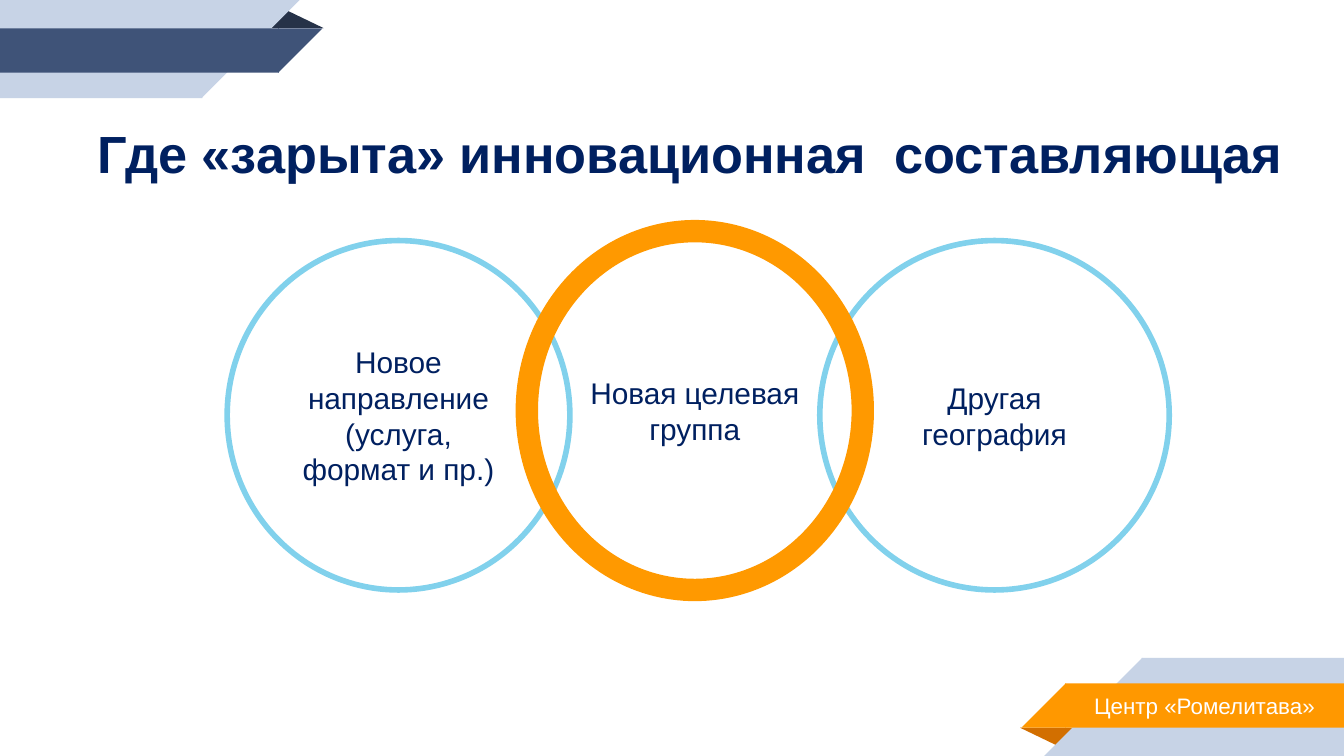
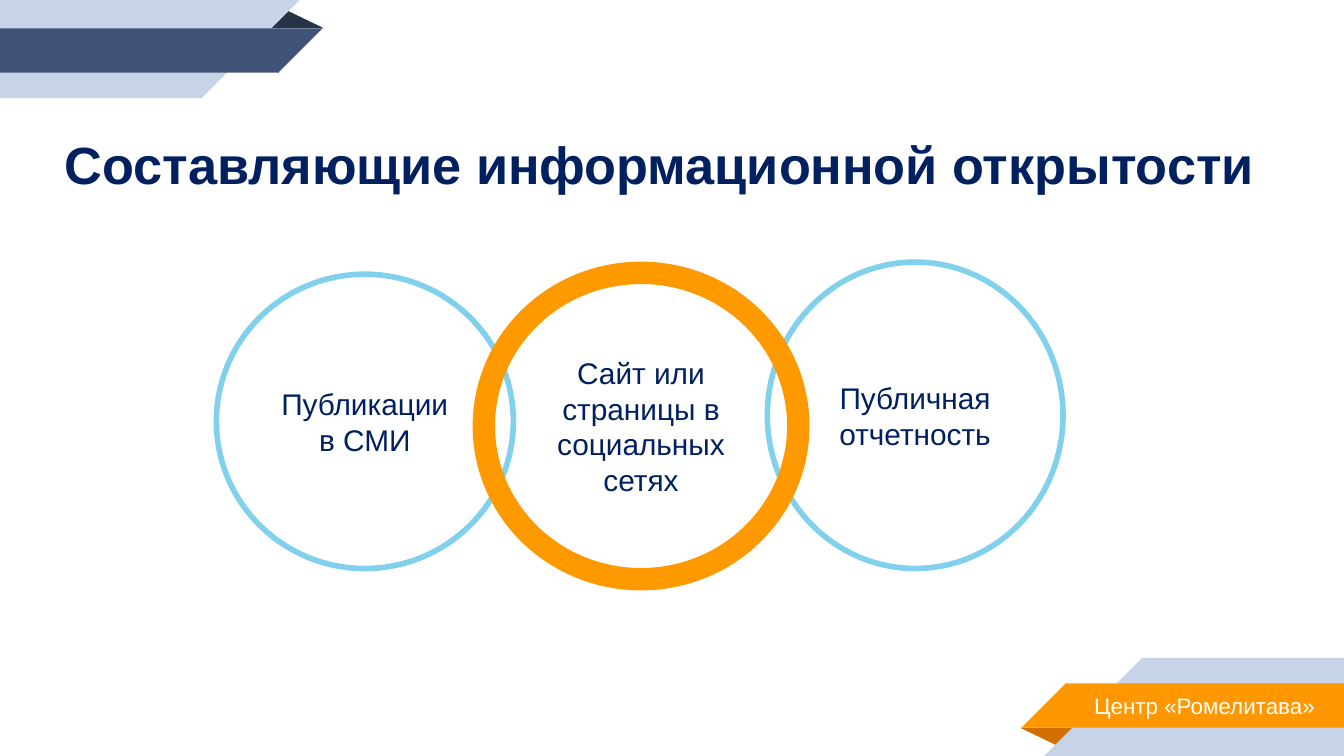
from pptx import Presentation
from pptx.dml.color import RGBColor
from pptx.enum.shapes import MSO_SHAPE
from pptx.enum.text import MSO_ANCHOR, PP_ALIGN
from pptx.util import Inches, Pt

NAVY = RGBColor(0x00, 0x20, 0x60)
WHITE = RGBColor(0xFF, 0xFF, 0xFF)
PALE_BLUE = RGBColor(0xC7, 0xD3, 0xE6)
SLATE = RGBColor(0x3F, 0x53, 0x78)
DARK_SLATE = RGBColor(0x26, 0x32, 0x48)
ORANGE = RGBColor(0xFF, 0x98, 0x00)
DARK_ORANGE = RGBColor(0xD2, 0x6F, 0x00)
RING_ORANGE = RGBColor(0xFF, 0x99, 0x00)
RING_BLUE = RGBColor(0x81, 0xD1, 0xEC)

FONT = "Arial"
FOOTER = "Центр «Ромелитава»"
COLUMNS, ROWS = 100, 56.25

deck = Presentation()
deck.slide_width = Inches(10)
deck.slide_height = Inches(5.625)
UNIT = deck.slide_width / COLUMNS

RIBBON = [
    (MSO_SHAPE.ISOSCELES_TRIANGLE, (19.8, 0.7, 4.3, 1.4), 0, "fold"),
    (MSO_SHAPE.RECTANGLE, (0, 0, 15.05, 7.3), 180, "back"),
    (MSO_SHAPE.RIGHT_TRIANGLE, (15, 0, 7.3, 7.3), 180, "back"),
    (MSO_SHAPE.RECTANGLE, (0, 2.1, 20.75, 3.3), 180, "front"),
    (MSO_SHAPE.RIGHT_TRIANGLE, (20.7, 2.1, 3.3, 3.3), 180, "front"),
]
CORNERS = [
    (True, {"fold": DARK_ORANGE, "back": PALE_BLUE, "front": ORANGE}),
    (False, {"fold": DARK_SLATE, "back": PALE_BLUE, "front": SLATE}),
]
SIDE_RING = (RING_BLUE, 3)
MIDDLE_RING = (RING_ORANGE, 12)
SLIDES = [
    ("Где «зарыта» инновационная  составляющая", (3.7, 10.8, 95.3, 3.9), [
        ("Новое направление (услуга, формат и пр.)", (16.9, 17.9, 25.5, 26), SIDE_RING),
        ("Другая география", (61, 17.9, 26, 26), SIDE_RING),
        ("Новая целевая группа", (39.2, 17.2, 25, 26.7), MIDDLE_RING),
    ]),
    ("Составляющие информационной открытости", (1.4, 2.9, 95.3, 12.6), [
        ("Публикации в СМИ", (16.1, 20.4, 22.1, 21.9), SIDE_RING),
        ("Публичная отчетность", (57.1, 19.5, 22, 22.8), SIDE_RING),
        ("Сайт или страницы в социальных сетях", (36, 20.3, 23.4, 22.8), MIDDLE_RING),
    ]),
]


def grid(*cells):
    return [round(cell * UNIT) for cell in cells]


def write(shape, text, size, colour, anchor=MSO_ANCHOR.MIDDLE, bold=False):
    frame = shape.text_frame
    frame.text = text
    frame.word_wrap = True
    frame.vertical_anchor = anchor
    frame.margin_left = frame.margin_right = Inches(0.1)
    frame.margin_top = frame.margin_bottom = Inches(0.1)
    paragraph = frame.paragraphs[0]
    paragraph.alignment = PP_ALIGN.CENTER
    font = paragraph.runs[0].font
    font.name, font.size, font.bold = FONT, Pt(size), bold
    font.color.rgb = colour


for heading, heading_box, rings in SLIDES:
    slide = deck.slides.add_slide(deck.slide_layouts[6])

    for at_bottom, colours in CORNERS:
        for kind, (x, y, width, height), angle, part in RIBBON:
            if at_bottom:
                x, y = COLUMNS - x - width, ROWS - y - height
                angle = (angle + 180) % 360
            piece = slide.shapes.add_shape(kind, *grid(x, y, width, height))
            piece.shadow.inherit = False
            piece.fill.solid()
            piece.fill.fore_color.rgb = colours[part]
            piece.line.fill.background()
            piece.rotation = angle
            if part == "fold":
                piece.adjustments[0] = 0.324
            else:
                piece._element.spPr.xfrm.set("flipH", "1")
            if at_bottom and part == "front" and kind == MSO_SHAPE.RECTANGLE:
                write(piece, FOOTER, 12, WHITE)

    title = slide.shapes.add_textbox(*grid(*heading_box))
    write(title, heading, 28, NAVY, MSO_ANCHOR.BOTTOM, True)

    for label, ring_box, (colour, weight) in rings:
        ring = slide.shapes.add_shape(MSO_SHAPE.OVAL, *grid(*ring_box))
        ring.shadow.inherit = False
        ring.fill.background()
        ring.line.color.rgb = colour
        ring.line.width = Pt(weight)
        write(ring, label, 16, NAVY)

deck.save("out.pptx")
